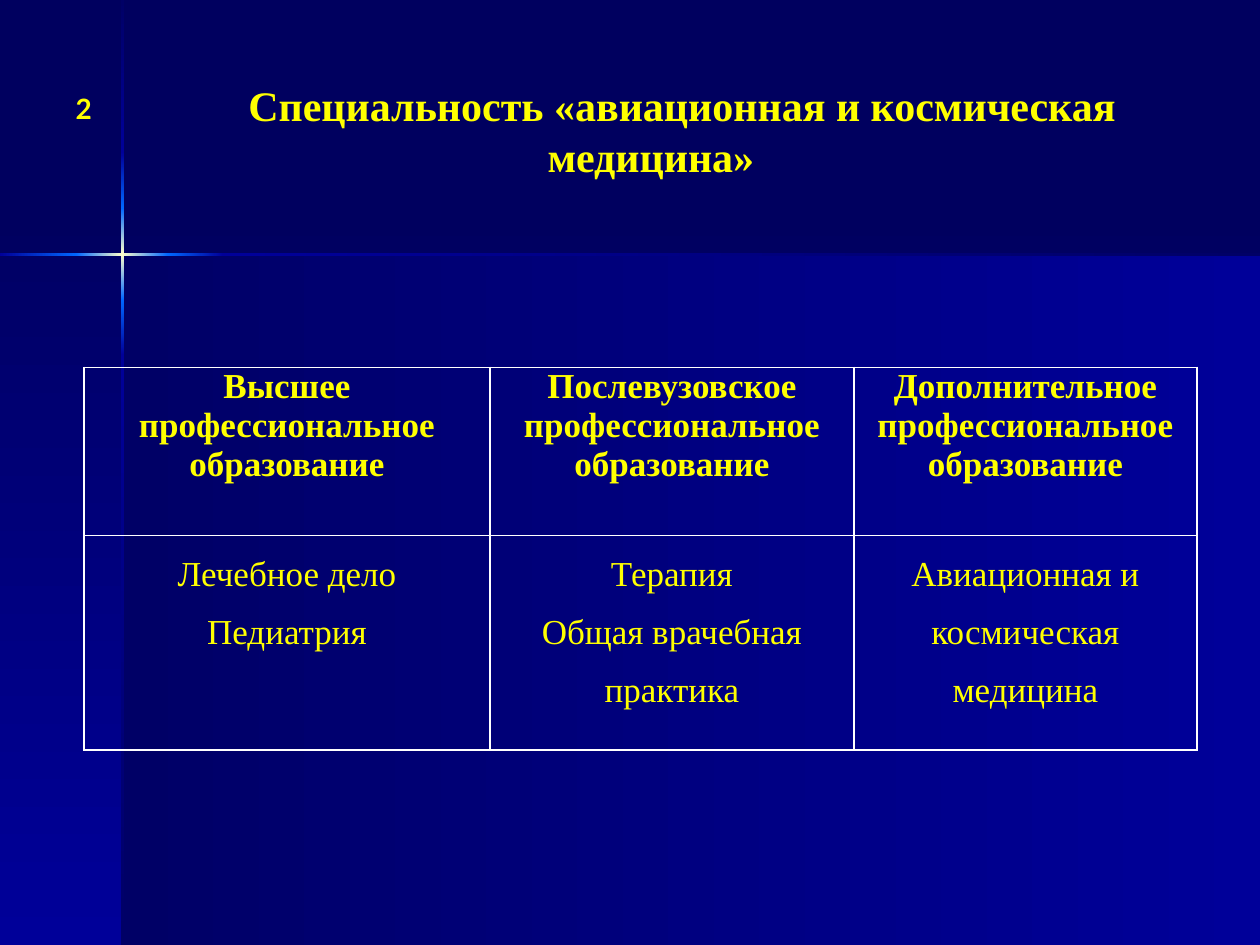
from dataclasses import dataclass

from lxml import etree
from pptx import Presentation
from pptx.dml.color import RGBColor
from pptx.enum.shapes import MSO_SHAPE
from pptx.enum.text import PP_ALIGN
from pptx.oxml.ns import qn
from pptx.util import Pt

RECTANGLE = MSO_SHAPE.RECTANGLE
CENTER, RIGHT = PP_ALIGN.CENTER, PP_ALIGN.RIGHT
ACROSS, DOWN = 0, 90


@dataclass(frozen=True)
class Theme:
    serif: str = "Times New Roman"
    sans: str = "Lato"
    text: str = "FFFF00"
    border: str = "FFFFFF"
    backdrop: str = "00005F"
    navy: str = "000066"
    blue: str = "000099"
    bright: str = "0066FF"
    glow: str = "FFFFCC"
    number_size: int = 16
    title_size: int = 24
    table_size: int = 20


THEME = Theme()
HEADINGS = [
    "Высшее профессиональное образование",
    "Послевузовское профессиональное образование",
    "Дополнительное профессиональное образование",
]
SPECIALTIES = [
    ["Лечебное дело", "Педиатрия"],
    ["Терапия", "Общая врачебная практика"],
    ["Авиационная и космическая медицина"],
]


def paint_gradient(fill, element, colors, angle):
    fill.gradient()
    fill.gradient_angle = -angle % 360
    stops = element.find(".//" + qn("a:gsLst"))
    for stop in list(stops):
        stops.remove(stop)
    for index, color in enumerate(colors):
        position = index * 100000 // (len(colors) - 1)
        stop = etree.SubElement(stops, qn("a:gs"), pos=str(position))
        etree.SubElement(stop, qn("a:srgbClr"), val=color)


def add_panel(page, box, colors, angle):
    panel = page.shapes.add_shape(RECTANGLE, *map(Pt, box))
    panel.shadow.inherit = False
    panel.line.fill.background()
    paint_gradient(panel.fill, panel._element, colors, angle)


def add_beam(page, box, angle, marks):
    left, top, width, height = box
    navy, blue, bright = THEME.navy, THEME.blue, THEME.bright
    ramps = [
        (navy, blue),
        (blue, bright),
        (bright, THEME.glow, bright),
        (bright, blue),
        (blue, navy),
    ]
    for start, end, colors in zip(marks, marks[1:], ramps):
        if start == end:
            continue
        if angle == DOWN:
            part = (left, top + start, width, end - start)
        else:
            part = (left + start, top, end - start, height)
        add_panel(page, part, colors, angle)


def add_backdrop(page, box):
    left, top, width, height = box
    cross_x, cross_y = left + 70, top + 145.5
    paint_gradient(page.background.fill, page._element,
                   (THEME.backdrop, THEME.navy), DOWN)
    shades = (THEME.navy, THEME.blue)
    lower = top + height - cross_y
    add_panel(page, (cross_x, cross_y, left + width - cross_x, lower), shades, ACROSS)
    add_panel(page, (left, cross_y, cross_x - left, lower), shades, DOWN)
    add_beam(page, (cross_x - 0.75, top, 1.5, height), DOWN,
             [0, 87, 119, 171.5, 203, height])
    add_beam(page, (left, cross_y - 0.75, width, 1.5), ACROSS,
             [0, 0, 43.5, 96, 127.5, width])


def style_paragraph(para, font, size, align, bold):
    para.alignment = align
    para.font.name = font
    para.font.size = Pt(size)
    para.font.bold = bold
    para.font.color.rgb = RGBColor.from_string(THEME.text)


def add_label(page, box, text, font, size, align, indent=0):
    frame = page.shapes.add_textbox(*map(Pt, box)).text_frame
    frame.word_wrap = True
    para = frame.paragraphs[0]
    para.text = text
    style_paragraph(para, font, size, align, True)
    para._p.get_or_add_pPr().set("indent", str(Pt(indent)))


def outline_cell(cell):
    properties = cell._tc.get_or_add_tcPr()
    for index, side in enumerate(("lnL", "lnR", "lnT", "lnB")):
        line = etree.Element(qn("a:" + side), w=str(Pt(1)))
        solid = etree.SubElement(line, qn("a:solidFill"))
        etree.SubElement(solid, qn("a:srgbClr"), val=THEME.border)
        properties.insert(index, line)


def fill_cell(cell, lines, bold, spacing):
    cell.fill.background()
    cell.margin_left = cell.margin_right = Pt(5)
    cell.margin_top = cell.margin_bottom = Pt(0)
    cell.text = "\n".join(lines)
    for para in cell.text_frame.paragraphs:
        style_paragraph(para, THEME.serif, THEME.table_size, CENTER, bold)
        para.line_spacing = spacing
    outline_cell(cell)


def add_education_table(page, box):
    width, height = box[2:]
    first, second = 232, 208
    header = 96
    table = page.shapes.add_table(2, len(HEADINGS), *map(Pt, box)).table
    table.first_row = table.horz_banding = False
    for column, size in zip(table.columns, (first, second, width - first - second)):
        column.width = Pt(size)
    for row, size in zip(table.rows, (header, height - header)):
        row.height = Pt(size)
    for index, (heading, specialties) in enumerate(zip(HEADINGS, SPECIALTIES)):
        fill_cell(table.cell(0, index), [heading], True, 1.0)
        fill_cell(table.cell(1, index), specialties, False, 1.5)


def main():
    deck = Presentation()
    deck.slide_width, deck.slide_height = Pt(720), Pt(540)
    page = deck.slides.add_slide(deck.slide_layouts[6])
    add_backdrop(page, (0, 0, 720, 540))
    add_label(page, (14.5, 49, 45, 57), "2", THEME.sans, THEME.number_size, RIGHT)
    add_label(page, (84, 42, 576, 65.5),
              "Специальность «авиационная и космическая медицина»",
              THEME.serif, THEME.title_size, CENTER, 35.5)
    add_education_table(page, (48, 210, 636, 218.5))
    deck.save("out.pptx")


if __name__ == "__main__":
    main()
